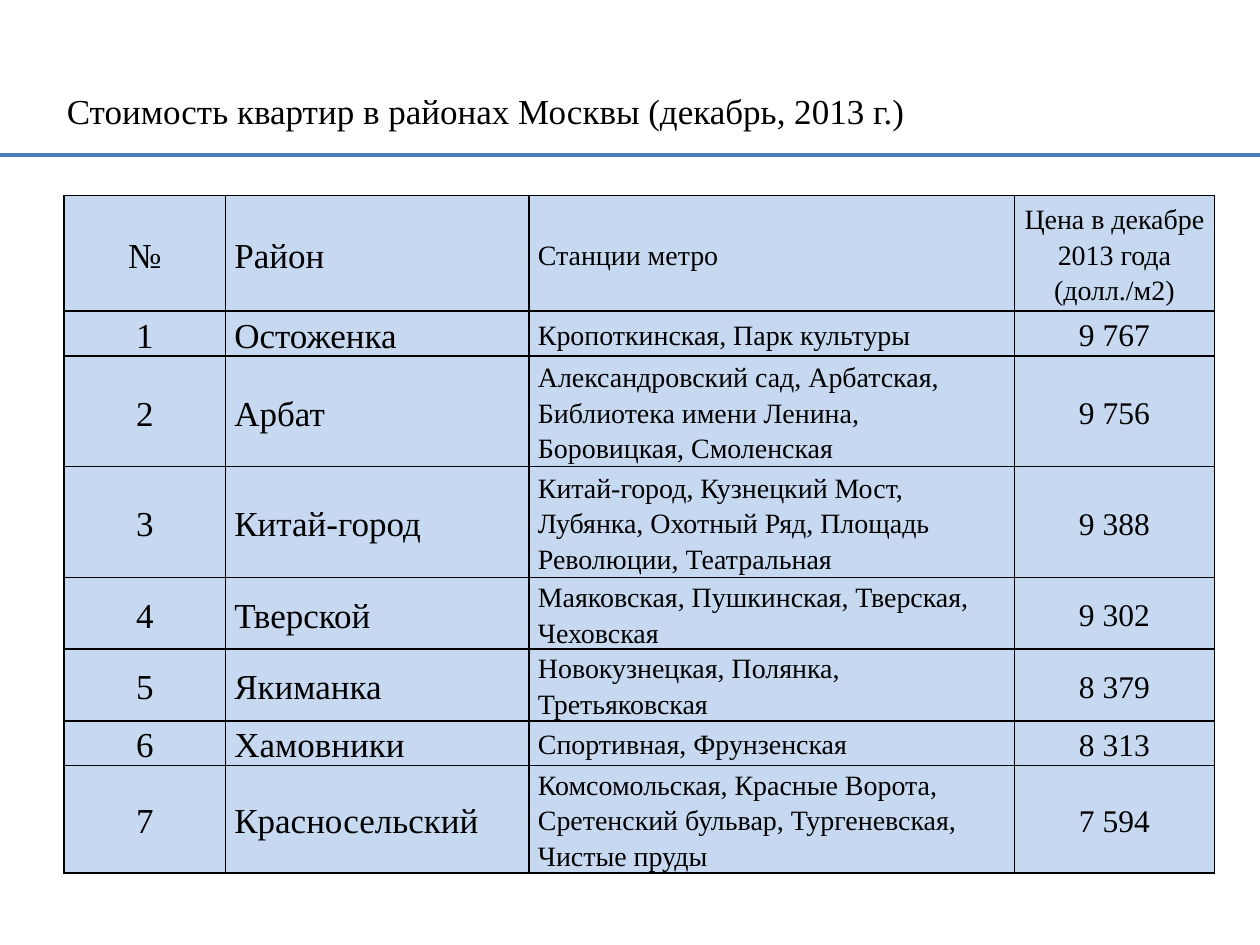
from lxml.etree import SubElement
from pptx import Presentation
from pptx.dml.color import RGBColor
from pptx.enum.shapes import MSO_CONNECTOR
from pptx.enum.text import MSO_ANCHOR, PP_ALIGN
from pptx.oxml.ns import qn
from pptx.util import Inches, Pt

# Content
TITLE = "Стоимость квартир в районах Москвы (декабрь, 2013 г.)"
HEADER = ("№", "Район", "Станции метро", "Цена в декабре 2013 года (долл./м2)")
DISTRICTS = [
    ("Остоженка", "Кропоткинская, Парк культуры", "9 767"),
    ("Арбат", "Александровский сад, Арбатская, Библиотека имени Ленина, "
              "Боровицкая, Смоленская", "9 756"),
    ("Китай-город", "Китай-город, Кузнецкий Мост, Лубянка, Охотный Ряд, "
                    "Площадь Революции, Театральная", "9 388"),
    ("Тверской", "Маяковская, Пушкинская, Тверская, Чеховская", "9 302"),
    ("Якиманка", "Новокузнецкая, Полянка, Третьяковская", "8 379"),
    ("Хамовники", "Спортивная, Фрунзенская", "8 313"),
    ("Красносельский", "Комсомольская, Красные Ворота, Сретенский бульвар, "
                       "Тургеневская, Чистые пруды", "7 594"),
]

# Look
COLORS = {"text": "000000", "cell": "C6D9F1", "border": "000000", "rule": "4B7EBC"}
FONT = "Times New Roman"
COLUMNS = [  # width, alignment, header size, body size
    (1.28, PP_ALIGN.CENTER, 20, 20),
    (2.41, PP_ALIGN.LEFT, 20, 20),
    (3.85, PP_ALIGN.LEFT, 16, 16),
    (1.59, PP_ALIGN.CENTER, 16, 18),
]
ROW_HEIGHTS = (0.92, 0.3, 0.88, 0.88, 0.44, 0.44, 0.3, 0.66)
CELL_FORMAT = {
    "vertical_anchor": MSO_ANCHOR.MIDDLE,
    "margin_left": Inches(0.07), "margin_right": Inches(0.07),
    "margin_top": 0, "margin_bottom": 0,
}


def color(name):
    return RGBColor.from_string(COLORS[name])


def set_all(target, values):
    for name, value in values.items():
        setattr(target, name, value)


def write(para, text, size, align):
    para.alignment = align
    span = para.add_run()
    span.text = text
    set_all(span.font, {"name": FONT, "size": Pt(size)})
    span.font.color.rgb = color("text")


def add_borders(cell):
    properties = cell._tc.get_or_add_tcPr()
    for position, side in enumerate(("a:lnL", "a:lnR", "a:lnT", "a:lnB")):
        line = SubElement(properties, qn(side), w=str(Pt(1)))
        fill = SubElement(line, qn("a:solidFill"))
        SubElement(fill, qn("a:srgbClr"), val=COLORS["border"])
        properties.insert(position, line)


deck = Presentation()
set_all(deck, {"slide_width": Inches(10), "slide_height": Inches(7.5)})
page = deck.slides.add_slide(deck.slide_layouts[5])

# Title
title = page.shapes.title
set_all(title, {"left": Inches(0.43), "top": Inches(0.29),
                "width": Inches(9), "height": Inches(1.17)})
title.text_frame.vertical_anchor = MSO_ANCHOR.MIDDLE
write(title.text_frame.paragraphs[0], TITLE, 20, PP_ALIGN.LEFT)

# Price table
rows = [HEADER] + [(str(number), *district)
                   for number, district in enumerate(DISTRICTS, 1)]
table = page.shapes.add_table(
    len(rows), len(COLUMNS), Inches(0.51), Inches(1.55),
    Inches(sum(column[0] for column in COLUMNS)), Inches(sum(ROW_HEIGHTS))).table
for column, (width, *_) in zip(table.columns, COLUMNS):
    column.width = Inches(width)
for row_index, (texts, height) in enumerate(zip(rows, ROW_HEIGHTS)):
    table.rows[row_index].height = Inches(height)
    for column_index, (text, column) in enumerate(zip(texts, COLUMNS)):
        _, align, header_size, body_size = column
        cell = table.cell(row_index, column_index)
        set_all(cell, CELL_FORMAT)
        cell.fill.solid()
        cell.fill.fore_color.rgb = color("cell")
        add_borders(cell)
        para = cell.text_frame.paragraphs[0]
        para.line_spacing = 1.15
        write(para, text, body_size if row_index else header_size, align)

# Rule under the title
rule = page.shapes.add_connector(
    MSO_CONNECTOR.STRAIGHT, 0, Inches(1.23), deck.slide_width, Inches(1.23))
rule.line.color.rgb = color("rule")
rule.line.width = Pt(2.5)
SubElement(rule._element.spPr, qn("a:effectLst"))

deck.save("out.pptx")
